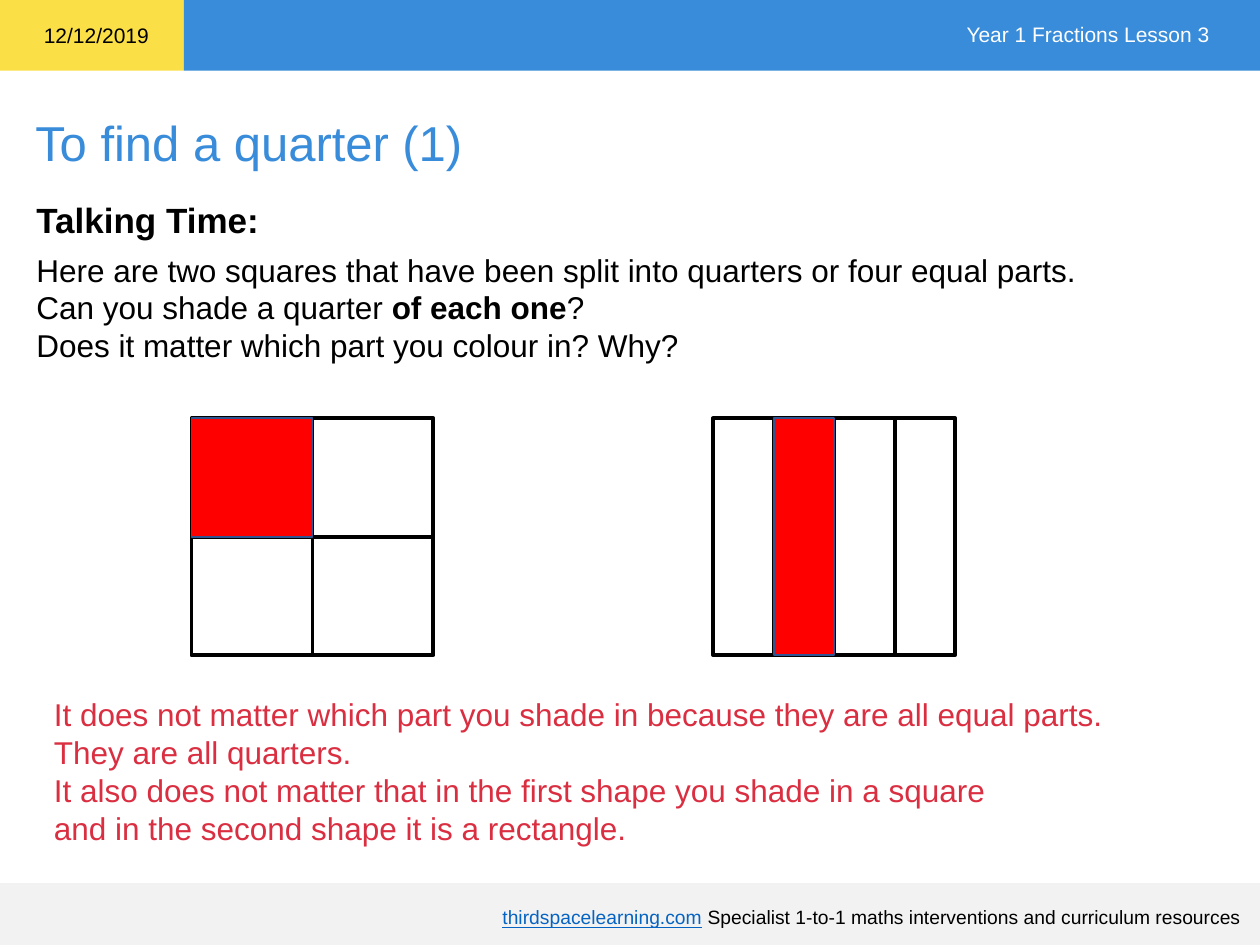
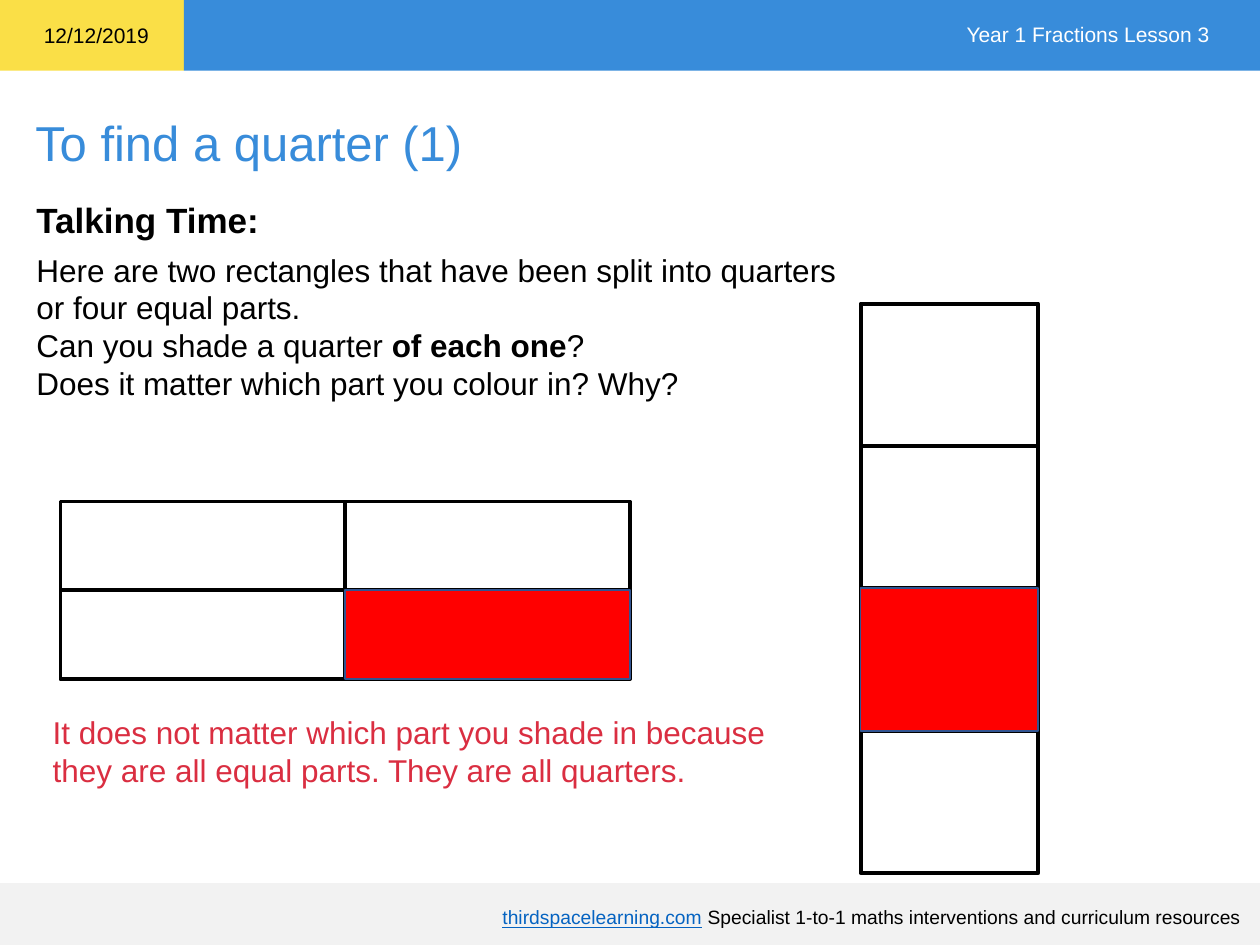
"""Build two lesson slides on finding a quarter of a shape."""
from dataclasses import dataclass
from typing import NamedTuple

import lxml.etree
import pptx
import pptx.dml.color
import pptx.enum.shapes
import pptx.enum.text
import pptx.oxml.ns
import pptx.util

ALIGN = pptx.enum.text.PP_ALIGN
ANCHOR = pptx.enum.text.MSO_ANCHOR
WIDTH = pptx.util.Inches(10)
HEIGHT = pptx.util.Inches(7.5)


@dataclass(frozen=True)
class Theme:
    """Colours, type sizes and line widths shared by the slides."""

    font: str = "Arial"
    blue: str = "388CDA"
    yellow: str = "FADF47"
    grey: str = "F2F2F2"
    ink: str = "000000"
    white: str = "FFFFFF"
    link: str = "0563C1"
    answer: str = "DA2E41"
    shade: str = "FF0000"
    edge: str = "325491"
    title: float = 28
    heading: float = 20
    body: float = 18
    small: float = 12
    foot: float = 11
    thick: float = 2.25
    thin: float = 1


THEME = Theme()


class Box(NamedTuple):
    """An area in percent of the slide's width and height."""

    left: float
    top: float
    width: float
    height: float

    def place(self) -> tuple[int, int, int, int]:
        """Return the area in slide units."""
        return (int(WIDTH * self.left / 100), int(HEIGHT * self.top / 100),
                int(WIDTH * self.width / 100), int(HEIGHT * self.height / 100))

    def cell(self, col: int, row: int, cols: int, rows: int) -> "Box":
        """Return one cell of the area split into equal parts."""
        wide, high = self.width / cols, self.height / rows
        return Box(self.left + col * wide, self.top + row * high, wide, high)


class Run(NamedTuple):
    """A piece of text that differs from its line."""

    text: str
    bold: bool = False
    tint: str | None = None
    under: bool = False


class Split(NamedTuple):
    """A shape cut into equal parts with one part shaded."""

    box: Box
    cols: int
    rows: int
    col: int
    row: int


class Lesson(NamedTuple):
    """The content that changes from slide to slide."""

    task: Box
    setup: list[str]
    reply: Box
    answer: list[str]
    splits: list[Split]


Line = str | list[str | Run]

PROMPTS: list[Line] = [
    ["Can you shade a quarter ", Run("of each one", bold=True), "?"],
    "Does it matter which part you colour in? Why?",
]

LESSONS = [
    Lesson(
        Box(1.9, 25.87, 96.7, 13.47),
        ["Here are two squares that have been split into quarters or four equal parts."],
        Box(3.3, 72.93, 90, 17.47),
        ["It does not matter which part you shade in because they are all equal parts.",
         "They are all quarters.",
         "It also does not matter that in the first shape you shade in a square",
         "and in the second shape it is a rectangle."],
        [Split(Box(15.2, 44.27, 19.2, 25.07), 2, 2, 0, 0),
         Split(Box(56.6, 44.27, 19.2, 25.07), 4, 1, 1, 0)],
    ),
    Lesson(
        Box(1.9, 25.87, 96.7, 17.47),
        ["Here are two rectangles that have been split into quarters",
         "or four equal parts."],
        Box(3.2, 74.8, 63.3, 9.47),
        ["It does not matter which part you shade in because they are all equal parts. "
         "They are all quarters."],
        [Split(Box(4.8, 53.07, 45.2, 18.8), 2, 2, 1, 1),
         Split(Box(68.3, 32.13, 14.1, 60.27), 1, 4, 0, 2)],
    ),
]


def paint(tint: str) -> pptx.dml.color.RGBColor:
    """Turn a hex string into a colour."""
    return pptx.dml.color.RGBColor.from_string(tint)


def write(slide, box: Box, lines: list[Line], *, size: float = THEME.body,
          tint: str = THEME.ink, bold: bool = False, align=ALIGN.LEFT,
          anchor=ANCHOR.TOP, space: float = 1, shape=None) -> None:
    """Write lines into a shape, or into a new text box."""
    if shape is None:
        shape = slide.shapes.add_textbox(*box.place())
    else:
        shape.left, shape.top, shape.width, shape.height = box.place()
    frame = shape.text_frame
    frame.word_wrap = True
    frame.auto_size = pptx.enum.text.MSO_AUTO_SIZE.NONE
    frame.vertical_anchor = anchor
    for num, line in enumerate(lines):
        para = frame.add_paragraph() if num else frame.paragraphs[0]
        para.alignment = align
        para.line_spacing = space
        for piece in [line] if isinstance(line, str) else line:
            item = Run(piece) if isinstance(piece, str) else piece
            run = para.add_run()
            run.text = item.text
            run.font.name = THEME.font
            run.font.size = pptx.util.Pt(size)
            run.font.bold = bold or item.bold
            run.font.underline = item.under
            run.font.color.rgb = paint(item.tint or tint)


def block(slide, box: Box, fill: str, edge: str | None = None, width: float = 0):
    """Draw a filled rectangle, with an outline if an edge colour is given."""
    shape = slide.shapes.add_shape(pptx.enum.shapes.MSO_SHAPE.RECTANGLE, *box.place())
    shape.shadow.inherit = False
    shape.fill.solid()
    shape.fill.fore_color.rgb = paint(fill)
    if edge:
        shape.line.color.rgb = paint(edge)
        shape.line.width = pptx.util.Pt(width)
    else:
        shape.line.fill.background()
    return shape


def cut(slide, frame, index: int, count: int, upright: bool) -> None:
    """Draw one dividing line across a frame, joined to it at its middle."""
    if upright:
        left = right = frame.left + frame.width * index // count
        top, base = frame.top, frame.top + frame.height
    else:
        top = base = frame.top + frame.height * index // count
        left, right = frame.left, frame.left + frame.width
    line = slide.shapes.add_connector(
        pptx.enum.shapes.MSO_CONNECTOR.STRAIGHT, left, top, right, base)
    line.line.color.rgb = paint(THEME.ink)
    line.line.width = pptx.util.Pt(THEME.thick)
    lxml.etree.SubElement(line._element.spPr, pptx.oxml.ns.qn("a:effectLst"))
    if index * 2 == count:
        start, end = (0, 2) if upright else (1, 3)
        line.begin_connect(frame, start)
        line.end_connect(frame, end)


def draw(slide, split: Split) -> None:
    """Draw a split shape and shade its chosen part."""
    frame = block(slide, split.box, THEME.white, THEME.ink, THEME.thick)
    for count, upright in ((split.cols, True), (split.rows, False)):
        for index in range(1, count):
            cut(slide, frame, index, count, upright)
    quarter = split.box.cell(split.col, split.row, split.cols, split.rows)
    block(slide, quarter, THEME.shade, THEME.edge, THEME.thin)


def dress(slide) -> None:
    """Add the bands, title, header and footer that every slide shares."""
    block(slide, Box(0, 0, 14.6, 7.47), THEME.yellow)
    block(slide, Box(14.6, 0, 85.4, 7.47), THEME.blue)
    block(slide, Box(0, 93.47, 100, 6.53), THEME.grey)
    write(slide, Box(1.8, 11.2, 97.7, 7.6), ["To find a quarter (1)"],
          size=THEME.title, tint=THEME.blue, shape=slide.shapes.title)
    write(slide, Box(2.5, 1.73, 11, 4), ["12/12/2019"], size=THEME.small)
    write(slide, Box(70, 1.6, 27, 4), ["Year 1 Fractions Lesson 3"],
          size=THEME.small, tint=THEME.white, align=ALIGN.RIGHT)
    write(slide, Box(4.2, 95.07, 95.3, 4),
          [[Run("thirdspacelearning.com", tint=THEME.link, under=True),
            " Specialist 1-to-1 maths interventions and curriculum resources"]],
          size=THEME.foot, align=ALIGN.RIGHT, anchor=ANCHOR.MIDDLE)
    write(slide, Box(1.9, 20, 25, 5.87), ["Talking Time:"],
          size=THEME.heading, bold=True, space=1.07)


def main() -> None:
    """Build and save the lesson."""
    deck = pptx.Presentation()
    deck.slide_width, deck.slide_height = WIDTH, HEIGHT
    for lesson in LESSONS:
        slide = deck.slides.add_slide(deck.slide_layouts.get_by_name("Title Only"))
        dress(slide)
        write(slide, lesson.task, lesson.setup + PROMPTS)
        for split in lesson.splits:
            draw(slide, split)
        write(slide, lesson.reply, lesson.answer, tint=THEME.answer)
    deck.save("out.pptx")


if __name__ == "__main__":
    main()
